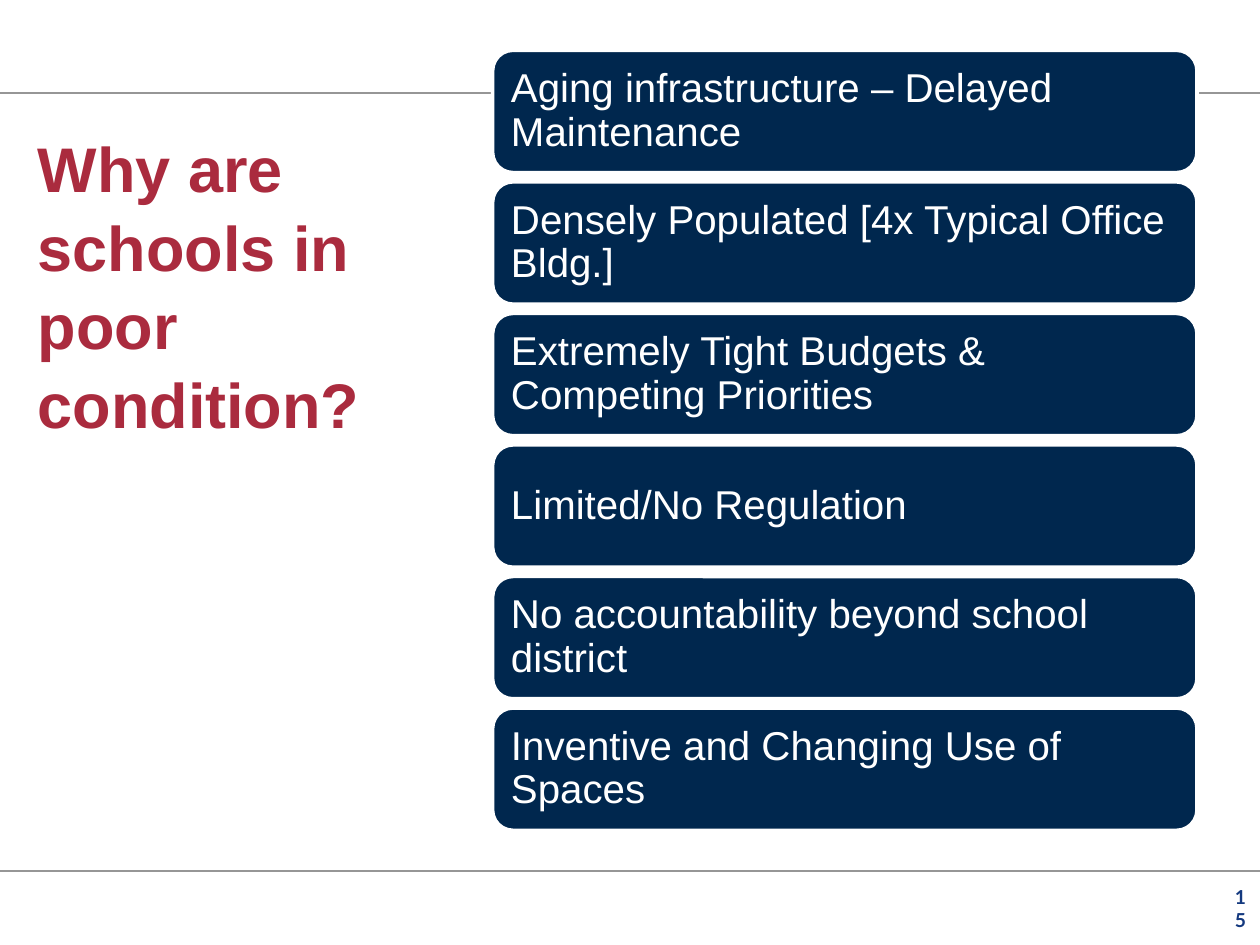
"""Build a slide on why schools are in poor condition."""
from lxml import etree
from pptx import Presentation
from pptx import util as u
from pptx.dml.color import RGBColor
from pptx.enum import shapes, text
from pptx.oxml.ns import qn

TITLE = "Why are schools in poor condition?"
PAGE_NUMBER = "15"
REASONS = [
    "Aging infrastructure – Delayed Maintenance",
    "Densely Populated [4x Typical Office Bldg.]",
    "Extremely Tight Budgets & Competing Priorities",
    "Limited/No Regulation",
    "No accountability beyond school district",
    "Inventive and Changing Use of Spaces",
]
COLORS = {"navy": "00274E", "red": "AA2B3E", "blue": "14397F", "gray": "969696", "white": "FFFFFF"}
WIDTH, HEIGHT = 10, 7.5
RULES = [0.74, 6.91]
CARD_LEFT, CARD_TOP, CARD_WIDTH, CARD_HEIGHT, CARD_PITCH = 3.91, 0.4, 5.59, 0.97, 1.044


def color(name):
    return RGBColor.from_string(COLORS[name])


def write(box, words, size, ink, font="Arial", bold=False, inset=0.0,
          anchor="BOTTOM", align="LEFT", spacing=1.0):
    frame = box.text_frame
    frame.word_wrap = True
    frame.vertical_anchor = text.MSO_ANCHOR[anchor]
    frame.margin_left = frame.margin_right = u.Inches(inset)
    frame.margin_top = frame.margin_bottom = u.Inches(inset)
    para = frame.paragraphs[0]
    para.alignment = text.PP_ALIGN[align]
    para.line_spacing = spacing
    span = para.add_run()
    span.text = words
    span.font.name, span.font.size, span.font.bold = font, u.Pt(size), bold
    span.font.color.rgb = color(ink)


def add_rule(page, top):
    rule = page.shapes.add_connector(
        shapes.MSO_CONNECTOR.STRAIGHT, 0, u.Inches(top), u.Inches(WIDTH), u.Inches(top))
    rule.line.color.rgb = color("gray")
    rule.line.width = u.Pt(1)
    etree.SubElement(rule._element.spPr, qn("a:effectLst"))


def add_card(page, row, reason):
    place = CARD_LEFT, CARD_TOP + row * CARD_PITCH, CARD_WIDTH, CARD_HEIGHT
    card = page.shapes.add_shape(
        shapes.MSO_SHAPE.ROUNDED_RECTANGLE, *map(u.Inches, place))
    card.shadow.inherit = False
    card.fill.solid()
    card.fill.fore_color.rgb = color("navy")
    card.line.color.rgb = color("white")
    card.line.width = u.Pt(2)
    write(card, reason, 23, "white", inset=0.1, anchor="MIDDLE", spacing=0.9)


def main():
    deck = Presentation()
    deck.slide_width, deck.slide_height = u.Inches(WIDTH), u.Inches(HEIGHT)
    page = deck.slides.add_slide(deck.slide_layouts[6])
    number = page.shapes.add_textbox(*map(u.Inches, (9.73, 7.21, 0.16, 0.18)))
    write(number, PAGE_NUMBER, 11, "blue", font="Lato", bold=True, align="RIGHT")
    for top in RULES:
        add_rule(page, top)
    title = page.shapes.add_textbox(*map(u.Inches, (0.3, 2.23, 3.29, 1.27)))
    write(title, TITLE, 36, "red", bold=True, spacing=1.04)
    for row, reason in enumerate(REASONS):
        add_card(page, row, reason)
    deck.save("out.pptx")


if __name__ == "__main__":
    main()
